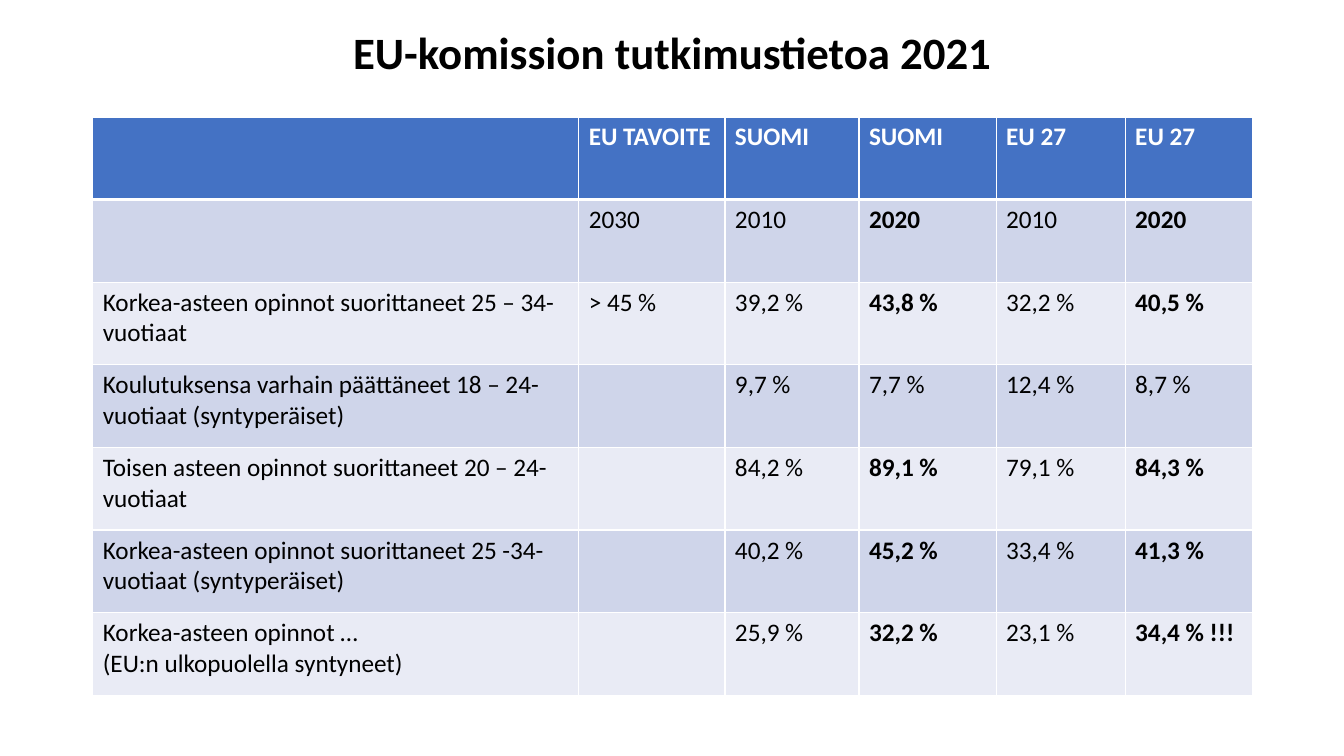
import pptx
import pptx.dml.color
import pptx.enum.text
import pptx.oxml.ns
import pptx.util
from lxml import etree

Inches = pptx.util.Inches
Pt = pptx.util.Pt
RGBColor = pptx.dml.color.RGBColor

TITLE = "EU-komission tutkimustietoa 2021"
HEADINGS = ("", "EU TAVOITE", "SUOMI", "SUOMI", "EU 27", "EU 27")
FIGURES = [
    ("", "2030", "2010", "2020", "2010", "2020"),
    ("Korkea-asteen opinnot suorittaneet 25 – 34-vuotiaat",
     "> 45 %", "39,2 %", "43,8 %", "32,2 %", "40,5 %"),
    ("Koulutuksensa varhain päättäneet 18 – 24-vuotiaat (syntyperäiset)",
     "", "9,7 %", "7,7 %", "12,4 %", "8,7 %"),
    ("Toisen asteen opinnot suorittaneet 20 – 24-vuotiaat",
     "", "84,2 %", "89,1 %", "79,1 %", "84,3 %"),
    ("Korkea-asteen opinnot suorittaneet 25 -34-vuotiaat (syntyperäiset)",
     "", "40,2 %", "45,2 %", "33,4 %", "41,3 %"),
    ("Korkea-asteen opinnot …\n(EU:n ulkopuolella syntyneet)",
     "", "25,9 %", "32,2 %", "23,1 %", "34,4 % !!!"),
]
COLUMN_WIDTHS = (4.82, 1.45, 1.33, 1.36, 1.28, 1.26)
ROW_HEIGHT = 0.82
LATEST_COLUMNS = (3, 5)
EARLY_LEAVERS_ROW = 3

FONT = "Calibri"
BLACK = RGBColor(0x00, 0x00, 0x00)
WHITE = RGBColor(0xFF, 0xFF, 0xFF)
HEADER_BLUE = RGBColor(0x44, 0x72, 0xC4)
BAND_DARK = RGBColor(0xCF, 0xD5, 0xEA)
BAND_LIGHT = RGBColor(0xE9, 0xEB, 0xF5)


def style_font(paragraph, size, color, bold):
    paragraph.font.name = FONT
    paragraph.font.size = Pt(size)
    paragraph.font.color.rgb = color
    paragraph.font.bold = bold


def set_borders(cell, widths):
    qn = pptx.oxml.ns.qn
    properties = cell._tc.get_or_add_tcPr()
    for side, width in widths.items():
        line = etree.SubElement(properties, qn(f"a:ln{side}"), w=str(Pt(width)))
        fill = etree.SubElement(line, qn("a:solidFill"))
        etree.SubElement(fill, qn("a:srgbClr"), val=str(WHITE))


def add_title(slide):
    box = slide.shapes.add_textbox(Inches(0.92), Inches(0.12), Inches(11.5), Inches(0.86))
    frame = box.text_frame
    frame.word_wrap = True
    frame.vertical_anchor = pptx.enum.text.MSO_ANCHOR.MIDDLE
    frame.text = TITLE
    heading = frame.paragraphs[0]
    heading.alignment = pptx.enum.text.PP_ALIGN.CENTER
    heading.line_spacing = 0.9
    style_font(heading, 32, BLACK, True)


def add_figures(slide):
    rows = [HEADINGS] + FIGURES
    table = slide.shapes.add_table(
        len(rows), len(HEADINGS), Inches(0.92), Inches(1.16),
        Inches(sum(COLUMN_WIDTHS)), Inches(ROW_HEIGHT * len(rows))).table
    for column, width in zip(table.columns, COLUMN_WIDTHS):
        column.width = Inches(width)
    for r, texts in enumerate(rows):
        table.rows[r].height = Inches(ROW_HEIGHT)
        header = r == 0
        band = HEADER_BLUE if header else BAND_DARK if r % 2 else BAND_LIGHT
        for c, text in enumerate(texts):
            cell = table.cell(r, c)
            set_borders(cell, {"L": 1, "R": 1, "T": 3 if r == 1 else 1, "B": 3 if header else 1})
            cell.fill.solid()
            cell.fill.fore_color.rgb = band
            cell.text = text
            bold = header or (c in LATEST_COLUMNS and r != EARLY_LEAVERS_ROW)
            for paragraph in cell.text_frame.paragraphs:
                style_font(paragraph, 18, WHITE if header else BLACK, bold)


def main():
    presentation = pptx.Presentation()
    presentation.slide_width = Inches(13.33)
    presentation.slide_height = Inches(7.5)
    slide = presentation.slides.add_slide(presentation.slide_layouts[6])
    add_title(slide)
    add_figures(slide)
    presentation.save("out.pptx")


if __name__ == "__main__":
    main()
